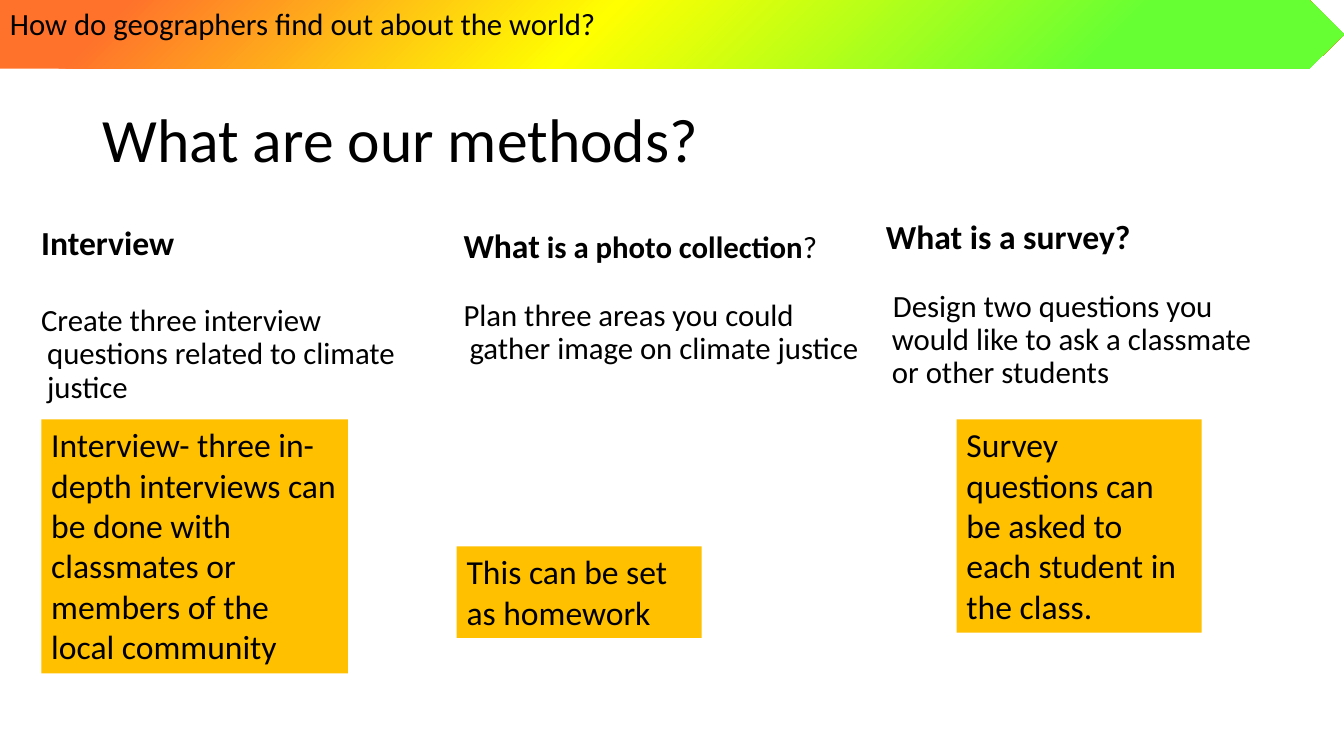
from lxml import etree
from pptx import Presentation
from pptx.dml.color import RGBColor
from pptx.enum import shapes, text
from pptx.oxml import ns
from pptx.util import Pt

COLOURS = {"text": "000000", "note": "FFC000", "green": "66FF33", "yellow": "FFFF00", "orange": "FF722C"}
BANNER_STOPS = [(0, "green"), (18, "green"), (56, "yellow"), (91, "orange"), (100, "orange")]
COLUMNS = [
    ((8.6, 158.4, 312, 142), [("Interview", 24, True)],
     "Create three interview questions related to climate justice", 30, -4.3),
    ((310.3, 160.6, 312, 343), [("What", 24, True), (" is a photo collection", 22, True), ("?", 22, False)],
     "Plan three areas you could gather image on climate justice", 24, -4.3),
    ((612, 154, 312, 147), [("What is a survey?", 24, True)],
     "Design two questions you would like to ask a classmate or other students", 24, 0.7),
]
NOTES = [
    ((29.5, 299.5, 219, 181.5),
     "Interview- three in-depth interviews can be done with classmates or members of the local community"),
    ((683.3, 299.5, 175, 152.5), "Survey questions can be asked to each student in the class."),
    ((326.2, 390.2, 175, 65.5), "This can be set as homework"),
]


def style_font(font, size, bold=False):
    """Apply the slide's typeface and text colour."""
    font.name, font.size, font.bold = "Calibri", Pt(size), bold
    font.color.rgb = RGBColor.from_string(COLOURS["text"])


def add_title(page, box, words):
    """Place and format the title placeholder."""
    title = page.shapes.title
    title.left, title.top, title.width, title.height = map(Pt, box)
    frame = title.text_frame
    frame.text = words
    frame.auto_size = text.MSO_AUTO_SIZE.NONE
    frame.vertical_anchor = text.MSO_ANCHOR.MIDDLE
    para = frame.paragraphs[0]
    para.alignment, para.line_spacing = text.PP_ALIGN.LEFT, 0.9
    style_font(para.font, 44)


def add_filled_shape(page, kind, box, words, size):
    """Add a borderless shape with left-aligned text at the top."""
    shape = page.shapes.add_shape(kind, *map(Pt, box))
    shape.shadow.inherit = False
    shape.line.fill.background()
    frame = shape.text_frame
    frame.text, frame.word_wrap = words, True
    frame.vertical_anchor = text.MSO_ANCHOR.TOP
    para = frame.paragraphs[0]
    para.alignment = text.PP_ALIGN.LEFT
    style_font(para.font, size)
    return shape


def add_banner(page, box, words):
    """Add the arrow banner with its gradient radiating from the lower right."""
    arrow = add_filled_shape(page, shapes.MSO_SHAPE.RIGHT_ARROW, box, words, 22)
    arrow.adjustments[0], arrow.adjustments[1] = 1, 0.507
    arrow.fill.gradient()
    gradient = arrow.element.spPr.find(ns.qn("a:gradFill"))
    for child in list(gradient):
        gradient.remove(child)
    stops = etree.SubElement(gradient, ns.qn("a:gsLst"))
    for position, colour in BANNER_STOPS:
        stop = etree.SubElement(stops, ns.qn("a:gs"), pos=str(position * 1000))
        etree.SubElement(stop, ns.qn("a:srgbClr"), val=COLOURS[colour])
    circle = etree.SubElement(gradient, ns.qn("a:path"), {"path": "circle"})
    etree.SubElement(circle, ns.qn("a:fillToRect"), l="100000", t="100000")
    etree.SubElement(gradient, ns.qn("a:tileRect"), r="-100000", b="-100000")


def add_note(page, box, words):
    """Add an amber note that grows with its text."""
    note = add_filled_shape(page, shapes.MSO_SHAPE.RECTANGLE, box, words, 24)
    note.fill.solid()
    note.fill.fore_color.rgb = RGBColor.from_string(COLOURS["note"])
    note.text_frame.auto_size = text.MSO_AUTO_SIZE.SHAPE_TO_FIT_TEXT


def add_column(page, box, heading, task, gap, task_indent):
    """Add a method heading with its task below."""
    frame = page.shapes.add_textbox(*map(Pt, box)).text_frame
    frame.word_wrap = True
    heading_para, task_para = frame.paragraphs[0], frame.add_paragraph()
    for words, size, bold in heading:
        span = heading_para.add_run()
        span.text = words
        style_font(span.font, size, bold)
    task_para.text, task_para.space_before = task, Pt(gap)
    style_font(task_para.font, 22)
    for para, indent in ((heading_para, -4.3), (task_para, task_indent)):
        para.line_spacing = 0.9
        properties = para._p.get_or_add_pPr()
        properties.set("marL", str(Pt(18)))
        properties.set("indent", str(Pt(indent)))


def main():
    """Build and save the methods slide."""
    deck = Presentation()
    deck.slide_width, deck.slide_height = Pt(960), Pt(540)
    page = deck.slides.add_slide(deck.slide_layouts[5])
    add_title(page, (66, 49.7, 828, 104.4), "What are our methods?")
    for column in COLUMNS:
        add_column(page, *column)
    add_banner(page, (0, 0, 960, 49), "How do geographers find out about the world?")
    for note in NOTES:
        add_note(page, *note)
    deck.save("out.pptx")


if __name__ == "__main__":
    main()
